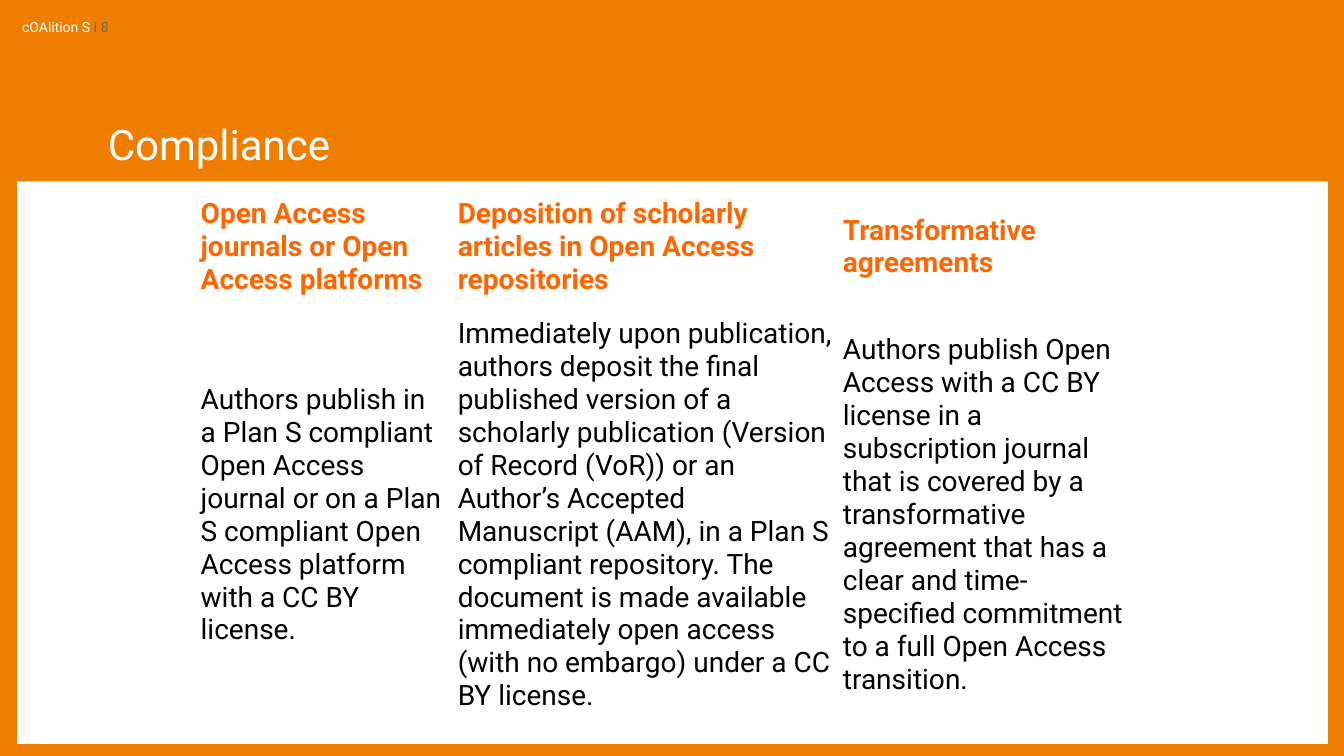
from typing import Any, NamedTuple

import pptx
import pptx.dml.color
import pptx.enum.shapes
import pptx.enum.text
import pptx.util

Inches = pptx.util.Inches
Pt = pptx.util.Pt
Anchor = pptx.enum.text.MSO_ANCHOR

ORANGE, WHITE = "EF7D00", "FFFFFF"


class Route(NamedTuple):
    """One way to comply, shown as a table column."""
    width: float
    heading: str
    description: str


ROUTES = [
    Route(2.55, "Open Access journals or Open Access platforms",
          "Authors publish in a Plan S compliant Open Access journal or on a Plan S "
          "compliant Open Access platform with a CC BY license."),
    Route(3.82, "Deposition of scholarly articles in Open Access repositories",
          "Immediately upon publication, authors deposit the final published version of a "
          "scholarly publication (Version of Record (VoR)) or an Author’s Accepted "
          "Manuscript (AAM), in a Plan S compliant repository. The document is made available "
          "immediately open access (with no embargo) under a CC BY license."),
    Route(2.97, "Transformative agreements",
          "Authors publish Open Access with a CC BY license in a subscription journal that "
          "is covered by a transformative agreement that has a clear and time-specified "
          "commitment to a full Open Access transition."),
]
ROW_HEIGHTS = [1.03, 4.28]


def set_format(target: Any, values: dict[str, Any]) -> None:
    for name, value in values.items():
        setattr(target, name, value)


def rgb(color: str) -> pptx.dml.color.RGBColor:
    return pptx.dml.color.RGBColor.from_string(color)


def set_margins(target: Any, left: float, top: float, right: float, bottom: float) -> None:
    set_format(target, {"margin_left": Inches(left), "margin_top": Inches(top),
                        "margin_right": Inches(right), "margin_bottom": Inches(bottom)})


def add_run(paragraph: Any, text: str, size: float, color: str, bold: bool = False) -> None:
    run = paragraph.add_run()
    run.text = text
    set_format(run.font, {"name": "Roboto", "size": Pt(size), "bold": bold})
    run.font.color.rgb = rgb(color)


def add_panel(slide: Any) -> None:
    panel = slide.shapes.add_shape(pptx.enum.shapes.MSO_SHAPE.RECTANGLE,
                                   Inches(0.17), Inches(1.8), Inches(13), Inches(5.58))
    panel.shadow.inherit = False
    panel.fill.solid()
    panel.fill.fore_color.rgb = rgb(WHITE)
    panel.line.fill.background()


def add_page_label(slide: Any) -> None:
    label = slide.shapes.add_textbox(Inches(0.16), Inches(0.13), Inches(2.99), Inches(0.32))
    label.text_frame.word_wrap = True
    set_margins(label.text_frame, 0.06, 0.05, 0.06, 0.05)
    paragraph = label.text_frame.paragraphs[0]
    add_run(paragraph, "cOAlition S ", 10, WHITE)
    add_run(paragraph, "I 8", 10, "637052")


def fill_title(slide: Any) -> None:
    title = slide.shapes.title
    set_format(title, {"left": Inches(1.05), "top": Inches(0.79),
                       "width": Inches(11.23), "height": Inches(0.98)})
    frame = title.text_frame
    set_format(frame, {"vertical_anchor": Anchor.BOTTOM, "word_wrap": True,
                       "auto_size": pptx.enum.text.MSO_AUTO_SIZE.NONE})
    set_margins(frame, 0.02, 0.05, 0.02, 0.09)
    paragraph = frame.paragraphs[0]
    set_format(paragraph, {"alignment": pptx.enum.text.PP_ALIGN.LEFT,
                           "line_spacing": Pt(30), "space_before": Pt(0)})
    add_run(paragraph, "Compliance", 30, WHITE)


def fill_cell(cell: Any, text: str, color: str, bold: bool) -> None:
    cell.fill.background()
    cell.vertical_anchor = Anchor.MIDDLE
    set_margins(cell, 0.05, 0.02, 0.05, 0.02)
    add_run(cell.text_frame.paragraphs[0], text, 20, color, bold)


def add_routes_table(slide: Any) -> None:
    width = sum(route.width for route in ROUTES)
    table = slide.shapes.add_table(len(ROW_HEIGHTS), len(ROUTES), Inches(1.94), Inches(1.93),
                                   Inches(width), Inches(sum(ROW_HEIGHTS))).table
    set_format(table, {"first_row": False, "horz_banding": False})
    for row, height in zip(table.rows, ROW_HEIGHTS):
        row.height = Inches(height)
    for index, route in enumerate(ROUTES):
        table.columns[index].width = Inches(route.width)
        fill_cell(table.cell(0, index), route.heading, "FF6600", True)
        fill_cell(table.cell(1, index), route.description, "000000", False)


def main() -> None:
    presentation = pptx.Presentation()
    set_format(presentation, {"slide_width": Inches(13.33), "slide_height": Inches(7.5)})
    slide = presentation.slides.add_slide(presentation.slide_layouts.get_by_name("Title Only"))
    slide.background.fill.solid()
    slide.background.fill.fore_color.rgb = rgb(ORANGE)
    add_panel(slide)
    add_page_label(slide)
    fill_title(slide)
    add_routes_table(slide)
    presentation.save("out.pptx")


if __name__ == "__main__":
    main()
